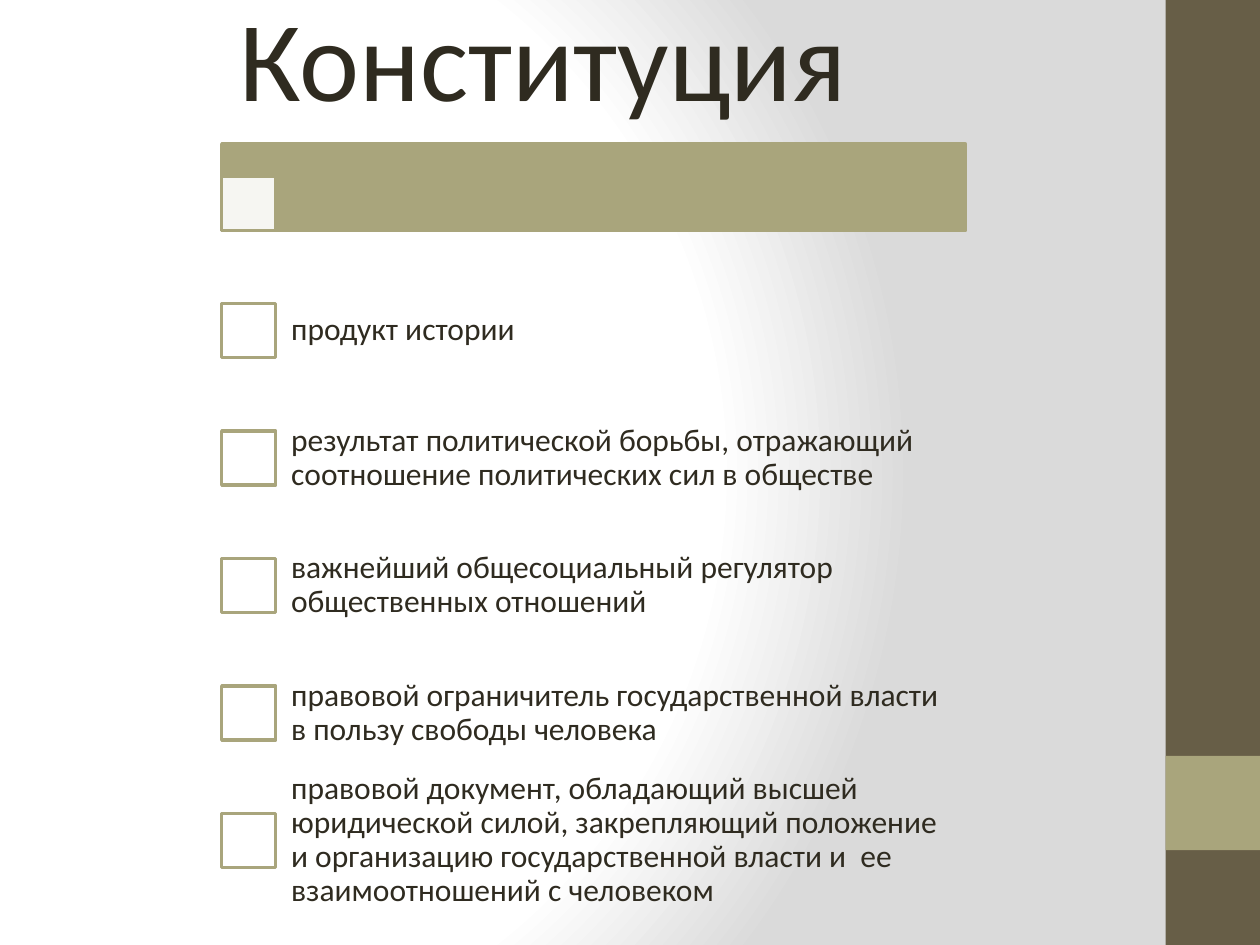
from pptx import Presentation
from pptx.dml.color import RGBColor
from pptx.enum.shapes import MSO_SHAPE
from pptx.enum.text import MSO_ANCHOR, MSO_AUTO_SIZE, PP_ALIGN
from pptx.oxml import parse_xml
from pptx.oxml.ns import nsdecls, qn
from pptx.util import Cm, Pt

RECT = MSO_SHAPE.RECTANGLE
MIDDLE = MSO_ANCHOR.MIDDLE
LEFT = PP_ALIGN.LEFT
FIXED = MSO_AUTO_SIZE.NONE

BROWN = RGBColor(0x67, 0x5E, 0x47)
OLIVE = RGBColor(0xA9, 0xA5, 0x7C)
WHITE = RGBColor(0xFF, 0xFF, 0xFF)
DARK = RGBColor(0x2F, 0x2B, 0x20)

ITEMS = [
    "продукт истории",
    "результат политической борьбы, отражающий соотношение политических сил в обществе",
    "важнейший общесоциальный регулятор общественных отношений",
    "правовой ограничитель государственной власти в пользу свободы человека",
    "правовой документ, обладающий высшей юридической силой, закрепляющий "
    "положение и организацию государственной власти и  ее взаимоотношений с человеком",
]

deck = Presentation()
deck.slide_width = Cm(25.4)
deck.slide_height = Cm(19.05)
slide = deck.slides.add_slide(deck.slide_layouts[5])


def add_rect(left, top, width, height, fill, line=None):
    rect = slide.shapes.add_shape(RECT, Cm(left), Cm(top), Cm(width), Cm(height))
    rect.shadow.inherit = False
    rect.fill.solid()
    rect.fill.fore_color.rgb = fill
    if line is None:
        rect.line.fill.background()
    else:
        rect.line.color.rgb = line
        rect.line.width = Pt(2)
    return rect


def set_text(shape, text, size, inset):
    frame = shape.text_frame
    frame.text = text
    frame.word_wrap = True
    frame.auto_size = FIXED
    frame.vertical_anchor = MIDDLE
    frame.margin_left = frame.margin_right = Cm(0.36)
    frame.margin_top = frame.margin_bottom = Cm(inset)
    para = frame.paragraphs[0]
    para.alignment = LEFT
    para.line_spacing = 0.9
    para.font.name = "Calibri"
    para.font.size = Pt(size)
    para.font.color.rgb = DARK


# Background: round gradient from white to grey
slide.element.cSld.insert(0, parse_xml(
    f'<p:bg {nsdecls("p", "a")}><p:bgPr><a:gradFill rotWithShape="1"><a:gsLst>'
    '<a:gs pos="0"><a:srgbClr val="FFFFFF"/></a:gs>'
    '<a:gs pos="75000"><a:srgbClr val="FFFFFF"/></a:gs>'
    '<a:gs pos="100000"><a:srgbClr val="DADADA"/></a:gs></a:gsLst>'
    '<a:path path="circle">'
    '<a:fillToRect l="20000" t="50000" r="100000" b="50000"/></a:path>'
    '</a:gradFill><a:effectLst/></p:bgPr></p:bg>'))

# Side band
add_rect(23.5, 0, 1.9, 19.05, BROWN)
add_rect(23.5, 15.24, 1.9, 1.9, OLIVE)

# Title and its bar
edge, wide, box = 4.47, 14.99, 1.09
title = slide.shapes.title
title.left, title.top = Cm(edge), Cm(-0.28)
title.width, title.height = Cm(wide), Cm(3.18)
set_text(title, "Конституция", 65, 0.23)

add_rect(edge, 2.9, wide, 1.75, OLIVE, OLIVE)
pale = add_rect(edge, 3.56, box, box, WHITE, OLIVE)
tint = pale.fill._xPr.find(qn("a:solidFill"))[0]
tint.append(parse_xml(f'<a:alpha {nsdecls("a")} val="90000"/>'))

# Checklist: each box is centred on its row
first, row, indent = 5.38, 2.57, 1.04
for i, item in enumerate(ITEMS):
    top = first + i * row
    add_rect(edge, top + (row - box) / 2, box, box, WHITE, OLIVE)
    label = slide.shapes.add_textbox(
        Cm(edge + indent), Cm(top), Cm(wide - indent), Cm(row))
    set_text(label, item, 18, 0.36)

deck.save("out.pptx")
